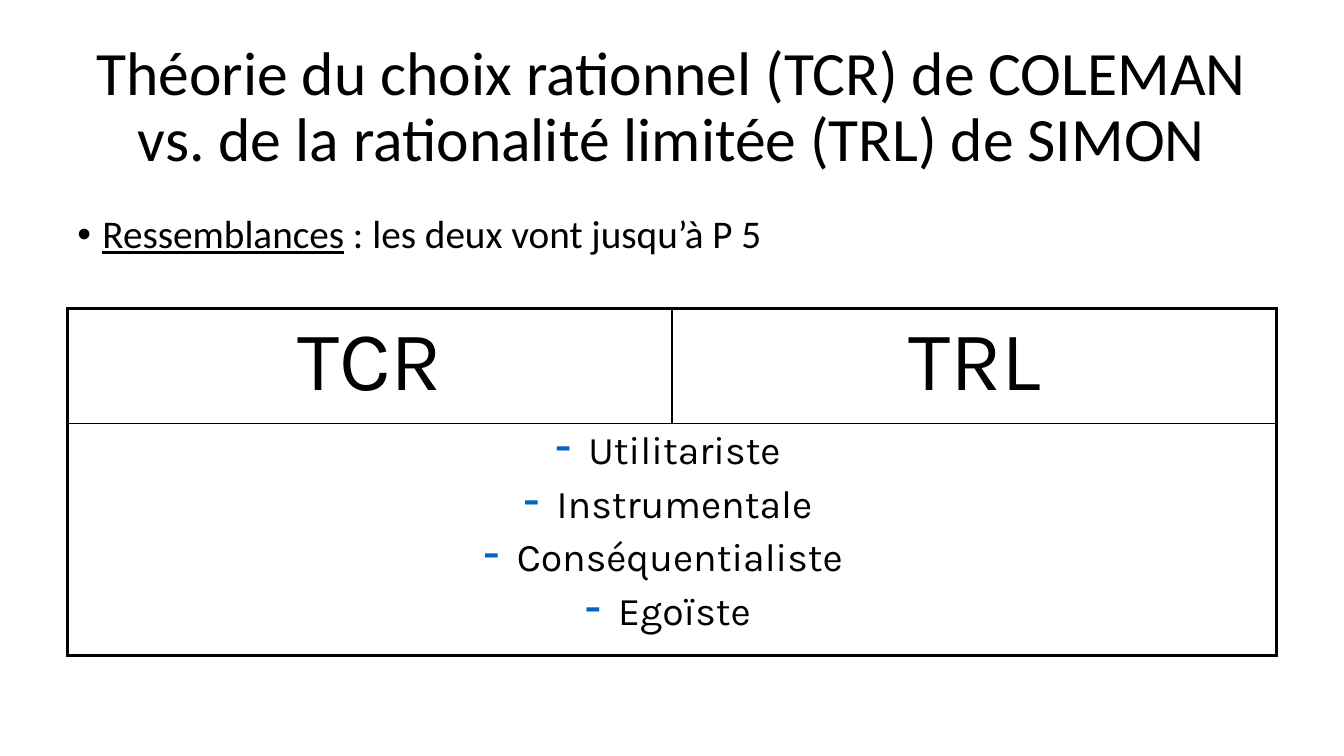
from lxml import etree
from pptx import Presentation
from pptx import util as u
from pptx.dml.color import RGBColor
from pptx.enum import text
from pptx.oxml import ns

BLACK = RGBColor(0x00, 0x00, 0x00)
BLUE = RGBColor(0x05, 0x63, 0xC1)
OUTER, INNER = 2.25, 1
WIDTH, HEIGHT = u.Inches(13.33), u.Inches(7.5)
MARGIN = int(WIDTH * 0.05)
CONTENT = WIDTH - 2 * MARGIN


def add_run(paragraph, words, size, font, underline=None):
    run = paragraph.add_run()
    run.text = words
    run.font.size = u.Pt(size)
    run.font.name = font
    run.font.color.rgb = BLACK
    run.font.underline = underline


def add_xml(parent, tag, **attributes):
    return etree.SubElement(parent, ns.qn(tag), attributes)


deck = Presentation()
deck.slide_width, deck.slide_height = WIDTH, HEIGHT
slide = deck.slides.add_slide(deck.slide_layouts[1])

title = slide.shapes.title
title.left, title.top = MARGIN, u.Inches(0.32)
title.width, title.height = CONTENT, u.Inches(1.51)
title.text_frame.auto_size = text.MSO_AUTO_SIZE.NONE
title.text_frame.vertical_anchor = text.MSO_ANCHOR.MIDDLE
heading = title.text_frame.paragraphs[0]
heading.alignment = text.PP_ALIGN.CENTER
heading.line_spacing = 0.9
add_run(heading, "Théorie du choix rationnel (TCR) de COLEMAN", 44, "Calibri")
heading.add_line_break()
add_run(heading, "vs. de la rationalité limitée (TRL) de SIMON", 44, "Calibri")

similarities = slide.placeholders[1]
similarities.left, similarities.top = MARGIN, u.Inches(2.08)
similarities.width, similarities.height = u.Inches(7.28), u.Inches(0.64)
similarities.text_frame.auto_size = text.MSO_AUTO_SIZE.NONE
similarity = similarities.text_frame.paragraphs[0]
similarity.line_spacing = 0.9
similarity.space_before = u.Pt(10)
add_run(similarity, "Ressemblances", 28, "Calibri", True)
add_run(similarity, " : les deux vont jusqu’à P 5", 28, "Calibri", False)
indent = similarity._p.get_or_add_pPr()
indent.set("marL", str(u.Inches(0.25)))
indent.set("indent", str(-u.Inches(0.25)))

ROWS = [1.14, 2.3]
comparison = slide.shapes.add_table(
    2, 2, MARGIN, u.Inches(3.06), CONTENT, u.Inches(sum(ROWS))).table
comparison.first_row = comparison.horz_banding = False
for row, height in zip(comparison.rows, ROWS):
    row.height = u.Inches(height)
for column in comparison.columns:
    column.width = CONTENT // 2
comparison.cell(1, 0).merge(comparison.cell(1, 1))

theories = ["TCR", "TRL"]
traits = [" Utilitariste", " Instrumentale", " Conséquentialiste ", " Egoïste"]
entries = [(0, 0, theories[:1], 60), (0, 1, theories[1:], 60), (1, 0, traits, 28)]
for row, column, lines, size in entries:
    frame = comparison.cell(row, column).text_frame
    for number, line in enumerate(lines):
        paragraph = frame.add_paragraph() if number else frame.paragraphs[0]
        paragraph.alignment = text.PP_ALIGN.CENTER
        add_run(paragraph, line, size, "Karla")
        properties = paragraph._p.get_or_add_pPr()
        add_xml(add_xml(properties, "a:spcBef"), "a:spcPct", val="20000")
        if lines is traits:
            add_xml(add_xml(properties, "a:buClr"), "a:srgbClr", val=str(BLUE))
            add_xml(properties, "a:buSzPct", val="120000")
            add_xml(properties, "a:buChar", char="-")

for row in range(2):
    for column in range(2):
        cell = comparison.cell(row, column)
        borders = {
            "a:lnL": INNER if column and not row else OUTER,
            "a:lnR": OUTER if column or row else INNER,
            "a:lnT": INNER if row else OUTER,
            "a:lnB": OUTER if row else INNER,
        }
        cell_properties = cell._tc.get_or_add_tcPr()
        for side, weight in borders.items():
            edge = add_xml(cell_properties, side, w=str(u.Pt(weight)))
            add_xml(add_xml(edge, "a:solidFill"), "a:srgbClr", val=str(BLACK))
        cell.fill.background()

deck.save("out.pptx")
